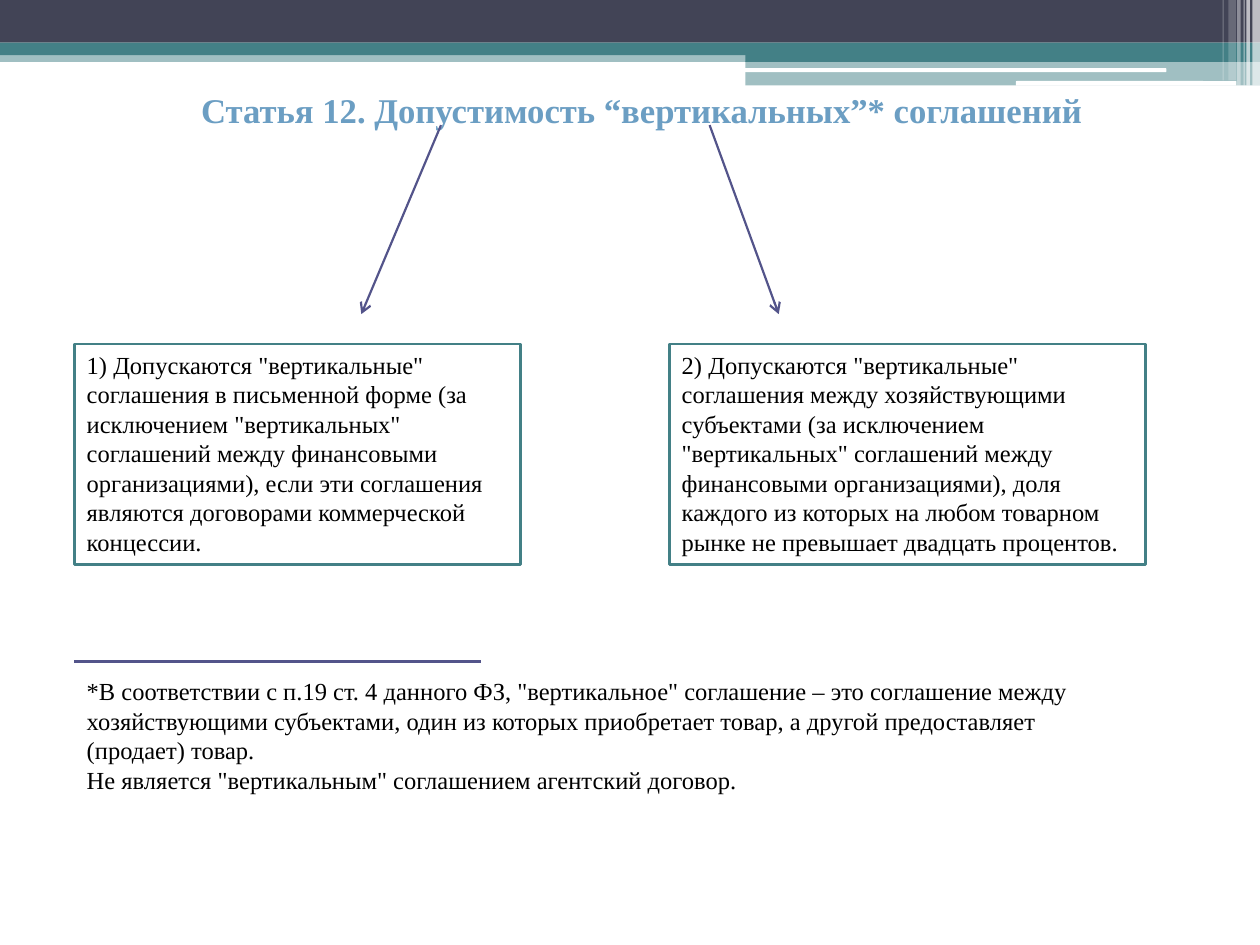
from lxml.etree import SubElement
from pptx import Presentation
from pptx.dml.color import RGBColor
from pptx.enum.shapes import MSO_CONNECTOR, MSO_SHAPE
from pptx.enum.text import MSO_ANCHOR, PP_ALIGN
from pptx.oxml.ns import qn
from pptx.util import Pt

FONT = "Times New Roman"
WHITE = RGBColor(0xFF, 0xFF, 0xFF)
BLACK = RGBColor(0, 0, 0)
SLATE = RGBColor(0x42, 0x44, 0x56)
TEAL = RGBColor(0x43, 0x80, 0x86)
VIOLET = RGBColor(0x53, 0x54, 0x8A)
TITLE_BLUE = RGBColor(0x6B, 0x9E, 0xC3)

# Content
TITLE = "Статья 12. Допустимость “вертикальных”* соглашений"
LEFT = 42.5
BOX_TOP, BOX_HEIGHT = 196.5, 126
BOXES = [  # left, width, text
    (LEFT, 255, '1) Допускаются "вертикальные" соглашения в письменной форме '
     '(за исключением "вертикальных" соглашений между финансовыми организациями), '
     'если эти соглашения являются договорами коммерческой концессии.'),
    (382.5, 272, '2) Допускаются "вертикальные" соглашения между хозяйствующими '
     'субъектами (за исключением "вертикальных" соглашений между финансовыми '
     'организациями), доля каждого из которых на любом товарном рынке не превышает '
     'двадцать процентов.'),
]
FOOTNOTE = [
    '*В соответствии с п.19 ст. 4 данного ФЗ, "вертикальное" соглашение – это '
    'соглашение между хозяйствующими субъектами, один из которых приобретает товар, '
    'а другой предоставляет (продает) товар.',
    'Не является "вертикальным" соглашением агентский договор.',
]
ARROWS = [(252, 206.5), (405.5, 445)]  # start x, end x
ARROW_TOP, ARROW_BOTTOM = 71.5, 179.5
RULE_Y, RULE_END = 378, 275

# Header band: left, top, width, height, colour, opacity in percent
BANDS = [
    (0, 28.8, 720, 6.6, TEAL, 50),
    (0, 0, 720, 24.4, SLATE, 100),
    (0, 24.4, 720, 7.2, TEAL, 100),
    (426, 28.2, 294, 7.2, TEAL, 100),
    (426, 34.9, 294, 14, TEAL, 50),
]
PILLS = [(425.5, 39, 241, 2.2), (580.5, 46.3, 126, 2.7)]
STRIPES = [  # left, width, height, opacity
    (715.7, 4.3, 49, 65), (712.2, 2, 49, 65), (710.6, 0.7, 49, 60),
    (707, 2, 49, 40), (702, 4.3, 46, 20), (698.6, 0.7, 46, 30),
]


def add_block(s, x, y, w, h, color, opacity=100, kind=MSO_SHAPE.RECTANGLE):
    sp = s.shapes.add_shape(kind, Pt(x), Pt(y), Pt(w), Pt(h))
    sp.shadow.inherit = False
    sp.fill.solid()
    sp.fill.fore_color.rgb = color
    sp.line.fill.background()
    if opacity < 100:
        clr = sp.element.spPr.find(qn("a:solidFill"))[0]
        SubElement(clr, qn("a:alpha"), val=str(opacity * 1000))
    return sp


def add_line(s, x1, y1, x2, y2, width, arrow=False):
    line = s.shapes.add_connector(MSO_CONNECTOR.STRAIGHT, Pt(x1), Pt(y1), Pt(x2), Pt(y2))
    line.line.color.rgb = VIOLET
    line.line.width = Pt(width)
    if arrow:
        SubElement(line.line._get_or_add_ln(), qn("a:tailEnd"), type="arrow")
    SubElement(line.element.spPr, qn("a:effectLst"))


def write(tf, lines, size=14, color=BLACK, bold=False, align=PP_ALIGN.LEFT,
          anchor=MSO_ANCHOR.TOP):
    tf.word_wrap = True
    tf.vertical_anchor = anchor
    for i, text in enumerate(lines):
        p = tf.paragraphs[0] if i == 0 else tf.add_paragraph()
        p.text = text
        p.alignment = align
        p.font.name = FONT
        p.font.size = Pt(size)
        p.font.bold = bold
        p.font.color.rgb = color


def main():
    prs = Presentation()
    prs.slide_width, prs.slide_height = Pt(720), Pt(540)
    s = prs.slides.add_slide(prs.slide_layouts[5])

    # Header band
    for band in BANDS:
        add_block(s, *band)
    for pill in PILLS:
        add_block(s, *pill, WHITE, kind=MSO_SHAPE.ROUNDED_RECTANGLE)
    for x, w, h, opacity in STRIPES:
        add_block(s, x, 0, w, h, WHITE, opacity)

    # Title, brought in front of the band
    title = s.shapes.title
    title.element.getparent().append(title.element)
    title.left, title.top, title.width, title.height = Pt(LEFT), Pt(43), Pt(648), Pt(78.5)
    title.text_frame.margin_top = Pt(7.5)
    write(title.text_frame, [TITLE], 19.8, TITLE_BLUE, True, PP_ALIGN.CENTER)

    # Two cases
    for x, w, text in BOXES:
        sp = add_block(s, x, BOX_TOP, w, BOX_HEIGHT, WHITE)
        sp.line.color.rgb = TEAL
        sp.line.width = Pt(1.5)
        write(sp.text_frame, [text])

    # Footnote under its rule
    note = s.shapes.add_textbox(Pt(LEFT), Pt(383), Pt(595.5), Pt(119))
    write(note.text_frame, FOOTNOTE)
    add_line(s, LEFT, RULE_Y, RULE_END, RULE_Y, 1.5)

    # Arrows from the title to the cases
    for x1, x2 in ARROWS:
        add_line(s, x1, ARROW_TOP, x2, ARROW_BOTTOM, 1.25, arrow=True)

    prs.save("out.pptx")


if __name__ == "__main__":
    main()
